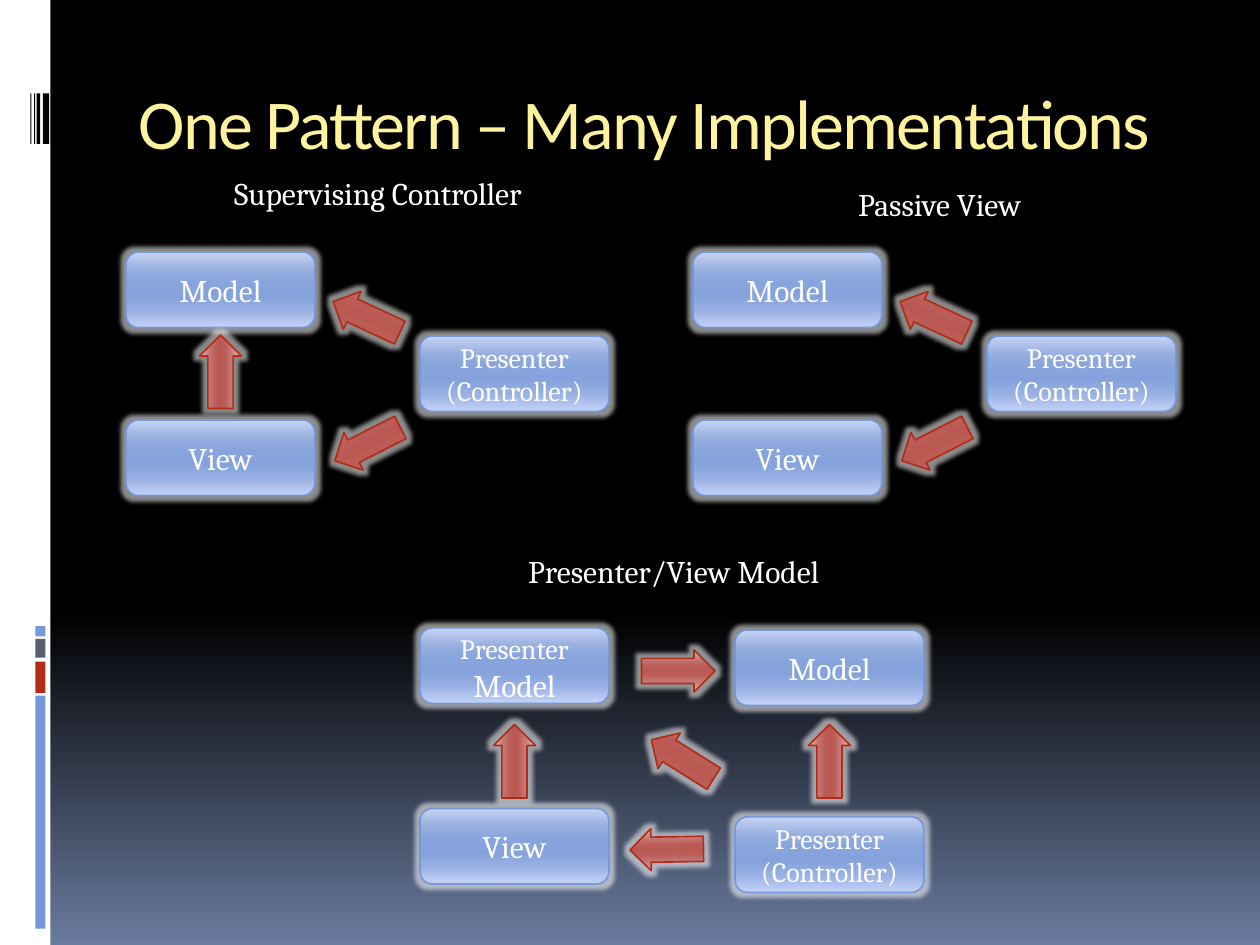
import pptx
import pptx.util
import pptx.dml.color
import pptx.enum.shapes
import pptx.enum.text
import pptx.oxml.ns
import lxml.etree

RGB = pptx.dml.color.RGBColor
SHAPE = pptx.enum.shapes.MSO_SHAPE
ALIGN = pptx.enum.text.PP_ALIGN
ANCHOR = pptx.enum.text.MSO_ANCHOR
FIT = pptx.enum.text.MSO_AUTO_SIZE
tag = pptx.oxml.ns.qn

WHITE = RGB(0xFF, 0xFF, 0xFF)
BLACK = RGB(0, 0, 0)
CREAM = RGB(0xFF, 0xF3, 0x9D)
BLUE = RGB(0x75, 0x98, 0xD9)
RED = RGB(0xB3, 0x2C, 0x16)
GREY = RGB(0x57, 0x5F, 0x6D)
DUSK = RGB(0x69, 0x7B, 0x9E)

MARKS = (0, 25, 40, 50, 60, 75, 100)
SKY = tuple(zip(MARKS, map(RGB.from_string, (
    "C6D3F4", "95ADDF", "87A4DC", "85A2DC", "87A4DC", "96AEE3", "C4D2F6"))))
ROSE = tuple(zip(MARKS, map(RGB.from_string, (
    "E5BCBA", "C17471", "BB5C57", "BA5852", "BB5C57", "C67874", "E6BAB9"))))
NIGHT = ((0, BLACK), (65, BLACK), (100, DUSK))

TITLE = "One Pattern – Many Implementations"
MODEL = (("Model", 18),)
VIEW = (("View", 18),)
CONTROL = (("Presenter (Controller)", 16),)
MIXED = (("Presenter", 16), (" Model", 18))

TRIO = ((MODEL, 12, 24), (VIEW, 12, 40), (CONTROL, 40, 32))
PAIR = ((34.9, 30.2, 205), (35, 42.3, 153))
UP = (21, 35.4, 270)
SQUARE = ((MODEL, 70, 60), (VIEW, 40, 77), (CONTROL, 70, 77.8), (MIXED, 40, 59.8))
LINKS = ((63.5, 80.9, 179), (49, 72.5, 270), (64.6, 63.9, 0),
         (79, 72.5, 270), (65, 72.3, 212))

GROUPS = (
    ("Supervising Controller", (12, 16, 48), 0, TRIO, PAIR + (UP,)),
    ("Passive View", (65, 17, 49), 54, TRIO, PAIR),
    ("Presenter/View Model ", (40, 52, 49), 0, SQUARE, LINKS),
)
BARS = (
    (0, 0, 4.8, 90, WHITE),
    (3.36, 66.24, 0.96, 22.2, BLUE),
    (3.36, 63, 0.96, 3, RED),
    (3.36, 60.84, 0.96, 1.8, GREY),
    (3.36, 59.64, 0.96, 0.96, BLUE),
    (4.08, 8.9, 0.6, 4.8, BLACK),
    (3.48, 8.9, 0.36, 4.8, BLACK),
    (3.24, 8.9, 0.12, 4.8, BLACK),
    (2.88, 8.9, 0.12, 4.8, BLACK),
)

deck = pptx.Presentation()
deck.slide_width = pptx.util.Inches(10)
deck.slide_height = pptx.util.Inches(7.5)
UNIT = deck.slide_width / 120
slide = deck.slides.add_slide(deck.slide_layouts[5])


def grid(*cells):
    return [round(cell * UNIT) for cell in cells]


def add(parent, name, **attrs):
    return lxml.etree.SubElement(parent, tag(name), attrs)


def shade(fill, owner, stops):
    fill.gradient()
    fill.gradient_angle = 270
    node = owner.find(".//" + tag("a:gsLst"))
    for old in list(node):
        node.remove(old)
    for mark, color in stops:
        stop = add(node, "a:gs", pos=str(mark * 1000))
        add(stop, "a:srgbClr", val=str(color))


def write(shape, runs, font="Cambria", color=WHITE, align=ALIGN.CENTER,
          anchor=ANCHOR.TOP, fit=FIT.NONE, space=None):
    frame = shape.text_frame
    frame.word_wrap = True
    frame.auto_size = fit
    frame.vertical_anchor = anchor
    para = frame.paragraphs[0]
    para.alignment = align
    for words, size in runs:
        run = para.add_run()
        run.text = words
        run.font.name = font
        run.font.size = pptx.util.Pt(size)
        run.font.color.rgb = color
        if space is not None:
            run.font._element.set("spc", str(space))


def block(kind, x, y, wide, high, stops, edge):
    shape = slide.shapes.add_shape(kind, *grid(x, y, wide, high))
    shape.shadow.inherit = False
    shade(shape.fill, shape.element, stops)
    shape.line.color.rgb = edge
    shape.line.width = pptx.util.Pt(0.94)
    halo = add(shape.element.find(".//" + tag("a:effectLst")), "a:glow", rad="63500")
    tint = add(halo, "a:srgbClr", val=str(WHITE))
    add(tint, "a:alpha", val="55000")
    return shape


def arrow(x, y, turn):
    shape = block(SHAPE.RIGHT_ARROW, x - 3.5, y - 2, 7, 4, ROSE, RED)
    shape.adjustments[0] = 0.6
    shape.adjustments[1] = 0.5
    shape.rotation = turn


shade(slide.background.fill, slide.element, NIGHT)

for *cells, color in BARS:
    bar = slide.shapes.add_shape(SHAPE.RECTANGLE, *grid(*cells))
    bar.shadow.inherit = False
    bar.fill.solid()
    bar.fill.fore_color.rgb = color
    bar.line.fill.background()

title = slide.shapes.title
title.left, title.top, title.width, title.height = grid(12, 7, 102, 12)
write(title, ((TITLE, 40),), font="Calibri", color=CREAM, align=ALIGN.LEFT, space=-100)

for name, (left, top, wide), shift, nodes, arrows in GROUPS:
    label = slide.shapes.add_textbox(*grid(left, top, wide, 4.8))
    write(label, ((name, 18),), fit=FIT.SHAPE_TO_FIT_TEXT)
    for runs, x, y in nodes:
        box = block(SHAPE.ROUNDED_RECTANGLE, x + shift, y, 18, 7.2, SKY, BLUE)
        write(box, runs, anchor=ANCHOR.MIDDLE)
    for x, y, turn in arrows:
        arrow(x + shift, y, turn)

deck.save("out.pptx")
